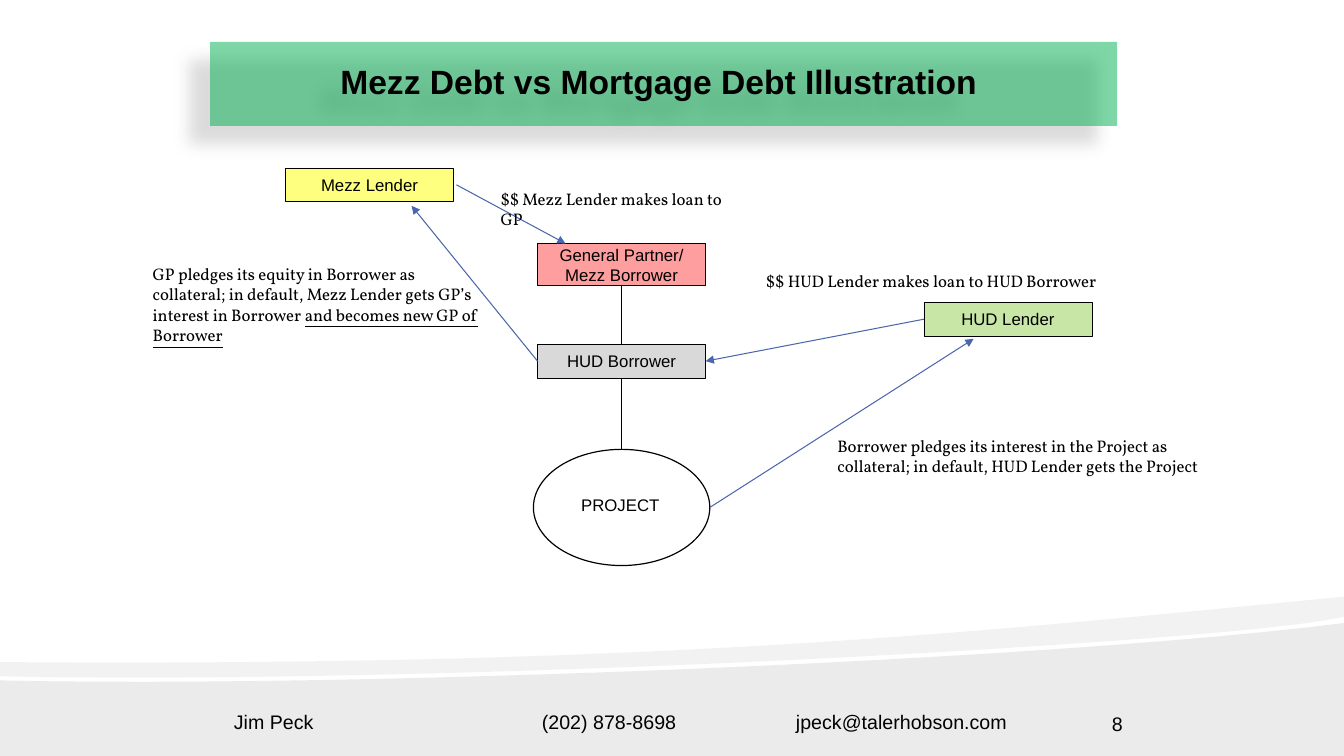
from pptx import Presentation
from pptx.dml.color import RGBColor
from pptx.enum.shapes import MSO_CONNECTOR, MSO_SHAPE
from pptx.enum.text import MSO_ANCHOR, MSO_AUTO_SIZE, PP_ALIGN
from pptx.oxml import parse_xml
from pptx.oxml.ns import nsdecls, qn
from pptx.util import Pt
from lxml.etree import SubElement

HUES = {
    "ink": "000000",
    "title": "00B050",
    "mezz": "FFFF00",
    "partner": "FF0000",
    "borrower": "D9D9D9",
    "lender": "92D050",
    "arrow": "4A66AC",
}


class Page:
    sans = "Arial"
    serif = "Vollkorn"

    def __init__(self, deck):
        self.slide = deck.slides.add_slide(deck.slide_layouts[5])
        self.shapes = self.slide.shapes

    def hue(self, name):
        return RGBColor.from_string(HUES[name])

    def paint(self, shape, name, alpha=100):
        shape.fill.solid()
        shape.fill.fore_color.rgb = self.hue(name)
        if alpha < 100:
            tint = shape._element.spPr.find(".//" + qn("a:srgbClr"))
            SubElement(tint, qn("a:alpha"), val=str(alpha * 1000))

    def stroke(self, line, name, width):
        line.color.rgb = self.hue(name)
        line.width = Pt(width)

    def style(self, para, face, size, align, bold=False):
        para.alignment = align
        font = para.font
        font.name, font.size, font.bold = face, Pt(size), bold
        font.color.rgb = self.hue("ink")

    def title(self, text, spot):
        shape = self.shapes.title
        shape.left, shape.top, shape.width, shape.height = map(Pt, spot)
        self.paint(shape, "title", 50)
        shape._element.spPr.append(parse_xml(
            f'<a:effectLst {nsdecls("a")}><a:outerShdw blurRad="{Pt(11.8)}" '
            f'dist="{Pt(19.7)}" dir="8460000" algn="ctr" rotWithShape="0">'
            '<a:srgbClr val="000000"><a:alpha val="28000"/></a:srgbClr>'
            '</a:outerShdw></a:effectLst>'))
        frame = shape.text_frame
        frame.text = text
        frame.auto_size = MSO_AUTO_SIZE.NONE
        frame.vertical_anchor = MSO_ANCHOR.MIDDLE
        frame.margin_left = frame.margin_top = 0
        frame.margin_right, frame.margin_bottom = Pt(7.2), Pt(3.6)
        self.style(frame.paragraphs[0], self.sans, 24, PP_ALIGN.CENTER, True)

    def box(self, text, spot, name, alpha=100):
        shape = self.shapes.add_shape(MSO_SHAPE.RECTANGLE, *map(Pt, spot))
        shape.shadow.inherit = False
        self.paint(shape, name, alpha)
        self.stroke(shape.line, "ink", 0.25)
        frame = shape.text_frame
        frame.text = text
        frame.word_wrap = True
        frame.vertical_anchor = MSO_ANCHOR.MIDDLE
        self.style(frame.paragraphs[0], self.sans, 12, PP_ALIGN.CENTER)
        return shape

    def oval(self, spot):
        shape = self.shapes.add_shape(MSO_SHAPE.OVAL, *map(Pt, spot))
        shape.shadow.inherit = False
        shape.fill.background()
        self.stroke(shape.line, "ink", 0.85)
        return shape

    def note(self, text, spot, face=serif, size=12, align=PP_ALIGN.LEFT,
             wrap=True, under=""):
        frame = self.shapes.add_textbox(*map(Pt, spot)).text_frame
        frame.word_wrap = wrap
        para = frame.paragraphs[0]
        para.add_run().text = text
        if under:
            run = para.add_run()
            run.text = under
            run.font.underline = True
        self.style(para, face, size, align)

    def link(self, start, end, head=None, tail=None, name="arrow"):
        line = self.shapes.add_connector(
            MSO_CONNECTOR.STRAIGHT, *map(Pt, start + end))
        if head:
            line.begin_connect(*head)
        if tail:
            line.end_connect(*tail)
        self.stroke(line.line, name, 0.75)
        if name == "arrow":
            SubElement(line.line._get_or_add_ln(), qn("a:tailEnd"), type="triangle")
        SubElement(line._element.spPr, qn("a:effectLst"))

    def curve(self, a, b, c, d, steps=24):
        for i in range(steps + 1):
            t = i / steps
            u = 1 - t
            yield tuple(
                Pt(u**3 * p + 3 * u * u * t * q + 3 * u * t * t * r + t**3 * s)
                for p, q, r, s in zip(a, b, c, d))

    def wave(self, curves, ends, alpha):
        dots = [dot for arc in curves for dot in self.curve(*arc)]
        dots += [tuple(map(Pt, end)) for end in ends]
        build = self.shapes.build_freeform(*dots[0])
        build.add_line_segments(dots[1:], close=True)
        shape = build.convert_to_shape()
        shape.shadow.inherit = False
        self.paint(shape, "ink", alpha)
        shape.line.fill.background()


def main():
    deck = Presentation()
    deck.slide_width, deck.slide_height = Pt(960), Pt(540)
    page = Page(deck)

    page.wave([((0, 486), (253.4, 491.8), (750.2, 471.6), (960, 445))],
              [(960, 540), (0, 540)], 8)
    page.wave([((960, 440.6), (924, 448.6), (827.3, 455.8), (740.9, 461.5)),
               ((740.9, 461.5), (502.6, 477.4), (185.8, 487.4), (0, 483.1)),
               ((0, 473), (469.4, 476.6), (699.1, 451.4), (960, 426.2))], [], 5)

    page.title("Mezz Debt vs Mortgage Debt Illustration", (150, 30, 648, 60))

    partner = page.box("General Partner/ Mezz Borrower", (384, 174, 120, 30),
                       "partner", 38)
    debtor = page.box("HUD Borrower", (384, 246, 120, 24), "borrower")
    page.box("Mezz Lender", (204, 120, 120, 24), "mezz", 50)
    lender = page.box("HUD Lender", (660, 216, 120, 24), "lender", 50)
    project = page.oval((381, 321, 126, 83))

    page.link((444, 204), (444, 246), (partner, 2), (debtor, 0), "ink")
    page.link((444, 270), (444, 321), (debtor, 2), (project, 0), "ink")
    page.link((326, 132), (404, 174))
    page.link((384, 258), (294, 147), head=(debtor, 1))
    page.link((660, 228), (504, 258), (lender, 1), (debtor, 3))
    page.link((507, 362.5), (695.5, 242))

    page.note("$$ Mezz Lender makes loan to GP", (350.5, 131, 189, 22))
    page.note("GP pledges its equity in Borrower as collateral; in default, "
              "Mezz Lender gets GP’s interest in Borrower ",
              (102, 185, 251, 66), under="and becomes new GP of Borrower")
    page.note("$$ HUD Lender makes loan to HUD Borrower",
              (540, 190, 253, 22), wrap=False)
    page.note("Borrower pledges its interest in the Project as collateral; "
              "in default, HUD Lender gets the Project", (591, 307.5, 273, 36))
    page.note("PROJECT", (408, 350, 71, 22), page.sans, wrap=False)

    for text, left, width in (("Jim Peck", 160, 90),
                              ("(202) 878-8698", 380, 130),
                              ("jpeck@talerhobson.com", 561.5, 180)):
        page.note(text, (left, 503.5, width, 24), page.sans, 14)
    page.note("8", (749, 505, 60, 24), page.sans, 14, PP_ALIGN.RIGHT)

    deck.save("out.pptx")


if __name__ == "__main__":
    main()
